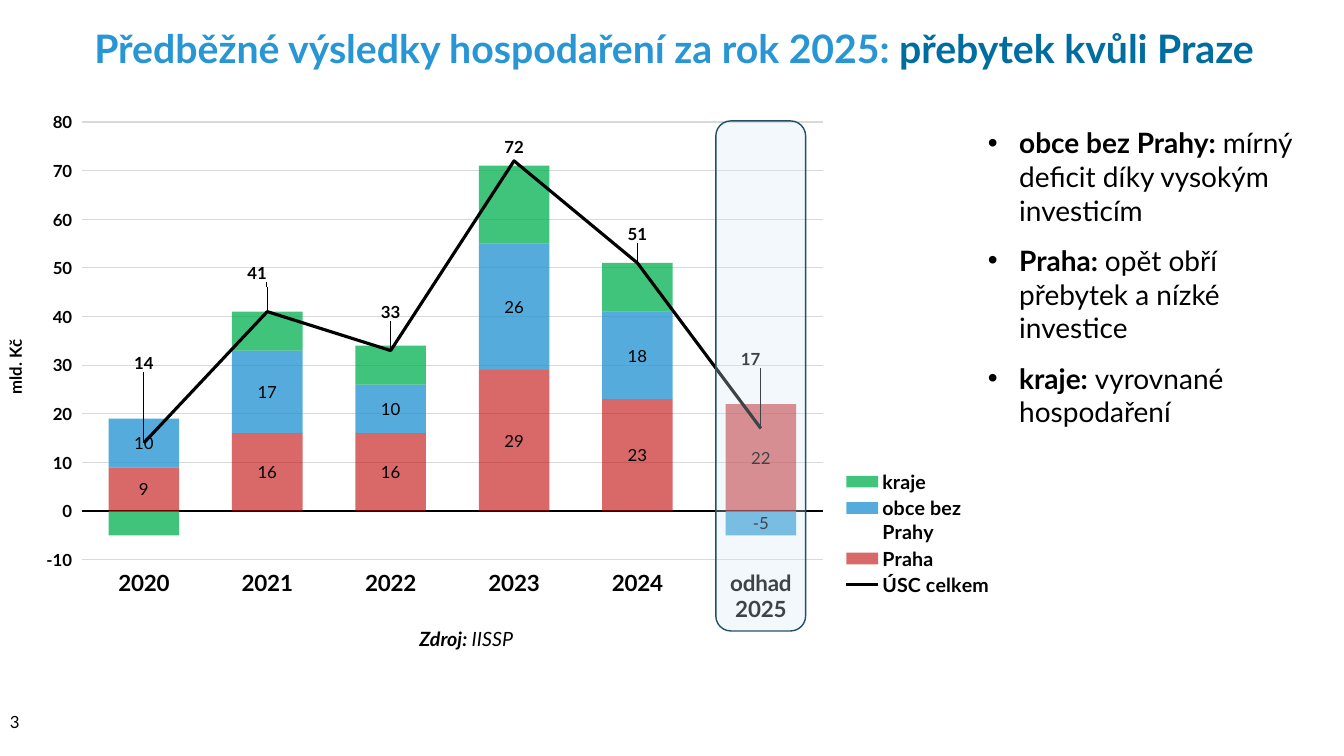
from dataclasses import dataclass
from typing import Optional

from lxml.etree import SubElement
from pptx import Presentation
from pptx.chart.chart import Chart
from pptx.chart.data import CategoryChartData
from pptx.dml.color import RGBColor
from pptx.enum.chart import (XL_CHART_TYPE, XL_LABEL_POSITION, XL_LEGEND_POSITION,
                             XL_MARKER_STYLE, XL_TICK_LABEL_POSITION, XL_TICK_MARK)
from pptx.enum.shapes import MSO_SHAPE
from pptx.enum.text import MSO_ANCHOR, MSO_AUTO_SIZE, PP_ALIGN
from pptx.oxml import parse_xml
from pptx.oxml.ns import nsdecls, qn
from pptx.util import Inches, Pt

FONT = "Lato"
BLACK = RGBColor(0x00, 0x00, 0x00)
GRID = RGBColor(0xD9, 0xD9, 0xD9)
RED = RGBColor(0xC0, 0x00, 0x00)
BLUE = RGBColor(0x28, 0x96, 0xD3)
GREEN = RGBColor(0x00, 0xB0, 0x50)
TITLE_BLUE = RGBColor(0x28, 0x96, 0xD4)
TITLE_DARK = RGBColor(0x00, 0x6D, 0xA1)
FRAME_FILL = RGBColor(0xD3, 0xEA, 0xF7)
FRAME_LINE = RGBColor(0x24, 0x50, 0x66)


@dataclass
class Bar:
    name: str
    values: tuple
    color: RGBColor
    opacity: int
    labelled: bool


@dataclass
class Span:
    text: str
    bold: bool = False
    color: RGBColor = BLACK
    italic: Optional[bool] = None


YEARS = ("2020", "2021", "2022", "2023", "2024", "odhad 2025")
BARS = (
    Bar("Praha", (9, 16, 16, 29, 23, 22), RED, 59, True),
    Bar("obce bez Prahy", (10, 17, 10, 26, 18, -5), BLUE, 79, True),
    Bar("kraje", (-5, 8, 8, 16, 10, 0), GREEN, 75, False),
)
TOTALS = (14, 41, 33, 72, 51, 17)
# Shift of each total's label from its place above the point, as shares of the chart
LABEL_SHIFTS = ((0, -0.13), (-0.01, -0.05), (0, -0.05), (0, 0), (0, -0.03), (-0.01, -0.11))
BULLETS = (
    ("obce bez Prahy: ", "mírný deficit díky vysokým investicím"),
    ("Praha: ", "opět obří přebytek a nízké investice"),
    ("kraje: ", "vyrovnané hospodaření"),
)


def set_font(font, size: float, bold: bool = False, color: RGBColor = BLACK) -> None:
    font.name = FONT
    font.size = Pt(size)
    font.bold = bold
    font.color.rgb = color


def set_opacity(element, percent: int) -> None:
    """Make the first solid fill inside the element translucent."""
    color = element.xpath(".//a:solidFill/a:srgbClr")[0]
    SubElement(color, qn("a:alpha")).set("val", str(percent * 1000))


def set_layout(parent, index: int, **values) -> None:
    """Put a manual layout at the given child index, replacing any present one."""
    for old in parent.findall(qn("c:layout")):
        parent.remove(old)
    parts = "".join(f'<c:{tag} val="{value}"/>' for tag, value in values.items())
    parent.insert(index, parse_xml(
        f'<c:layout {nsdecls("c")}><c:manualLayout>{parts}</c:manualLayout></c:layout>'))


def move_totals_to_line(chart: Chart) -> None:
    """Turn the last column series into a line on the same axes."""
    bar_chart = chart.plots[0]._element
    ser = bar_chart.findall(qn("c:ser"))[-1]
    for flag in ser.findall(qn("c:invertIfNegative")):
        ser.remove(flag)
    line_chart = parse_xml(f'<c:lineChart {nsdecls("c")}><c:grouping val="standard"/>'
                           '<c:varyColors val="0"/><c:marker val="1"/></c:lineChart>')
    line_chart.insert(2, ser)
    for axis in bar_chart.findall(qn("c:axId")):
        SubElement(line_chart, qn("c:axId")).set("val", axis.get("val"))
    bar_chart.addnext(line_chart)


def style_axes(chart: Chart) -> None:
    years, amounts = chart.category_axis, chart.value_axis
    years.tick_label_position = XL_TICK_LABEL_POSITION.LOW
    years.major_tick_mark = XL_TICK_MARK.NONE
    years.format.line.color.rgb = BLACK
    years.format.line.width = Pt(1.25)
    set_font(years.tick_labels.font, 16, True)

    amounts.minimum_scale, amounts.maximum_scale, amounts.major_unit = -10, 80, 10
    amounts.major_tick_mark = XL_TICK_MARK.OUTSIDE
    amounts.format.line.fill.background()
    amounts.major_gridlines.format.line.color.rgb = GRID
    amounts.major_gridlines.format.line.width = Pt(0.75)
    amounts.tick_labels.number_format = "0"
    amounts.tick_labels.number_format_is_linked = False
    set_font(amounts.tick_labels.font, 12, True)
    tf = amounts.axis_title.text_frame
    tf.text = "mld. Kč"
    set_font(tf.paragraphs[0].runs[0].font, 12, True)
    body = tf._txBody.find(qn("a:bodyPr"))
    body.set("rot", "-5400000")
    body.set("vert", "horz")


def style_totals(series) -> None:
    series.smooth = False
    series.marker.style = XL_MARKER_STYLE.NONE
    series.format.line.color.rgb = BLACK
    series.format.line.width = Pt(2.25)
    labels = series.data_labels
    labels.show_value = True
    labels.number_format = "#,##0"
    labels.number_format_is_linked = False
    labels.position = XL_LABEL_POSITION.ABOVE
    set_font(labels.font, 12, True)
    for i, (x, y) in enumerate(LABEL_SHIFTS):
        label = series.points[i].data_label
        set_font(label.font, 12, True)
        label.position = XL_LABEL_POSITION.ABOVE
        set_layout(series._element.xpath(f"c:dLbls/c:dLbl[c:idx/@val='{i}']")[0], 1, x=x, y=y)


def add_budget_chart(s) -> None:
    data = CategoryChartData(number_format="0")
    data.categories = YEARS
    for bar in BARS:
        data.add_series(bar.name, bar.values)
    data.add_series("ÚSC celkem", TOTALS)
    chart = s.shapes.add_chart(XL_CHART_TYPE.COLUMN_STACKED, Inches(0), Inches(1.11),
                               Inches(10.06), Inches(5.06), data).chart
    set_font(chart.font, 10)
    chart.has_title = False
    move_totals_to_line(chart)
    columns, line = chart.plots
    columns.gap_width, columns.overlap = 75, 100
    columns.vary_by_categories = False
    for bar, series in zip(BARS, columns.series):
        series.invert_if_negative = False
        series.format.fill.solid()
        series.format.fill.fore_color.rgb = bar.color
        set_opacity(series._element, bar.opacity)
        if bar.labelled:
            labels = series.data_labels
            labels.show_value = True
            labels.number_format = "0"
            labels.number_format_is_linked = False
            labels.position = XL_LABEL_POSITION.CENTER
            set_font(labels.font, 12)
    style_totals(line.series[0])
    style_axes(chart)

    chart.has_legend = True
    chart.legend.position = XL_LEGEND_POSITION.RIGHT
    chart.legend.include_in_layout = False
    set_font(chart.legend.font, 14, True)
    set_layout(chart.legend._element, 1, xMode="edge", yMode="edge", x=0.83, y=0.7, w=0.15, h=0.26)
    set_layout(columns._element.getparent(), 0, layoutTarget="inner", xMode="edge",
               yMode="edge", x=0.081, y=0.02, w=0.73, h=0.862)


def add_text(s, left: float, top: float, width: float, height: float, paragraphs, size: float,
             anchor=MSO_ANCHOR.TOP, wrap: bool = True, bulleted: bool = False):
    """Add a text box; each paragraph is a sequence of spans."""
    tf = s.shapes.add_textbox(Inches(left), Inches(top), Inches(width), Inches(height)).text_frame
    tf.word_wrap = wrap
    tf.vertical_anchor = anchor
    tf.auto_size = MSO_AUTO_SIZE.NONE
    for i, spans in enumerate(paragraphs):
        p = tf.paragraphs[0] if i == 0 else tf.add_paragraph()
        if bulleted:
            props = p._p.get_or_add_pPr()
            props.set("marL", str(Inches(0.31)))
            props.set("indent", str(Inches(-0.31)))
            SubElement(props, qn("a:buFont")).set("typeface", "Arial")
            SubElement(props, qn("a:buChar")).set("char", "•")
            p.space_after = Pt(12)
        for span in spans:
            r = p.add_run()
            r.text = span.text
            set_font(r.font, size, span.bold, span.color)
            r.font.italic = span.italic
    return tf


def add_estimate_frame(s) -> None:
    sp = s.shapes.add_shape(MSO_SHAPE.ROUNDED_RECTANGLE, Inches(7.1), Inches(1.2),
                            Inches(0.89), Inches(5.06))
    sp.shadow.inherit = False
    sp.fill.solid()
    sp.fill.fore_color.rgb = FRAME_FILL
    set_opacity(sp._element, 29)
    sp.line.color.rgb = FRAME_LINE
    sp.line.width = Pt(1)


def main() -> None:
    prs = Presentation()
    prs.slide_width, prs.slide_height = Inches(13.33), Inches(7.5)
    s = prs.slides.add_slide(prs.slide_layouts[6])
    add_budget_chart(s)
    add_estimate_frame(s)
    title = add_text(s, 0.39, 0, 12.59, 0.89,
                     [[Span("Předběžné výsledky hospodaření za rok 2025: ", True, TITLE_BLUE),
                       Span("přebytek kvůli Praze", True, TITLE_DARK)]], 28, MSO_ANCHOR.MIDDLE)
    title.paragraphs[0].alignment = PP_ALIGN.CENTER
    title.paragraphs[0].line_spacing = 1.13
    add_text(s, 9.7, 1.2, 3.28, 3.13,
             [[Span(who, True), Span(what)] for who, what in BULLETS], 20, bulleted=True)
    add_text(s, 4.06, 6.17, 1.19, 0.34,
             [[Span("Zdroj: ", True, italic=True), Span("IISSP", italic=True)]], 14, wrap=False)
    add_text(s, 0, 6.95, 0.48, 0.43, [[Span("3")]], 12, MSO_ANCHOR.MIDDLE)
    prs.save("out.pptx")


if __name__ == "__main__":
    main()
